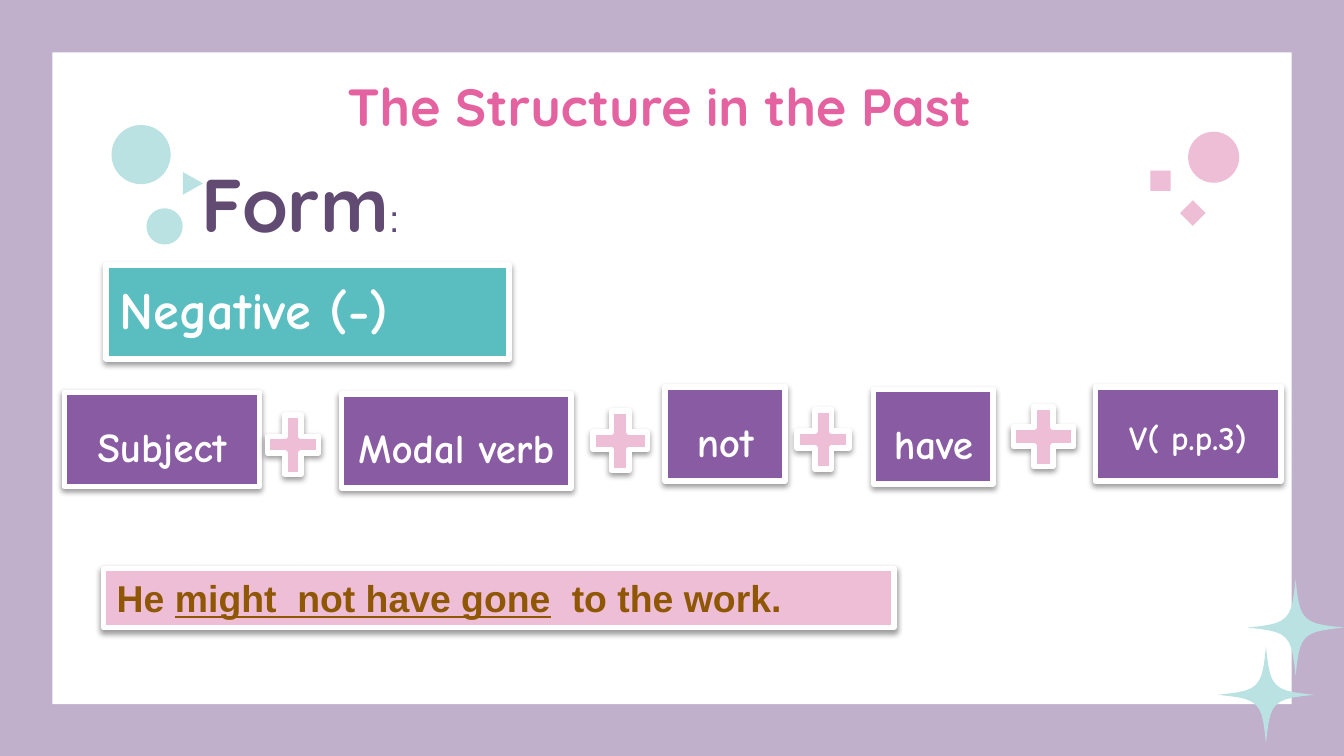
import pptx
import pptx.util
import pptx.dml.color
import pptx.enum.shapes
import pptx.enum.text
import pptx.oxml
import pptx.oxml.ns
from pptx.util import Inches

SHAPE = pptx.enum.shapes.MSO_SHAPE
ALIGN = pptx.enum.text.PP_ALIGN
ANCHOR = pptx.enum.text.MSO_ANCHOR

THEME = {
    "frame": "C0B0CC", "panel": "FFFFFF", "title": "E562A0", "heading": "624B73",
    "purple": "885BA2", "teal": "5ABEC0", "pink": "EEBDD6", "mint": "BBE2E2",
    "white": "FFFFFF", "example": "8F5603",
    "display": "Quicksand", "hand": "Comic Neue", "body": "Arial",
    "title_size": 28, "heading_size": 40, "label_size": 28,
    "term_size": 22, "small_size": 18, "example_size": 20,
}

# Runs: text, font, size, colour, bold, underline
TITLE = [("The Structure in the Past", "display", "title_size", "title", True, False)]
HEADING = [("Form", "display", "heading_size", "heading", True, False),
           (":", "body", "example_size", "heading", False, False)]
LABEL = [("Negative (-)", "hand", "label_size", "white", True, False)]
EXAMPLE = [("He ", "body", "example_size", "example", True, False),
           ("might  not have gone", "body", "example_size", "example", True, True),
           ("  to the work.", "body", "example_size", "example", True, False)]

# Formula terms: text, left, top, width, size, how far the text sits below the middle
TERMS = [("Subject", 0.48, 2.92, 1.45, "term_size", 0.05),
         ("Modal verb", 2.54, 2.93, 1.71, "term_size", 0.05),
         ("not", 4.95, 2.88, 0.89, "term_size", 0.05),
         ("have", 6.5, 2.9, 0.89, "term_size", 0.05),
         ("V( p.p.3)", 8.15, 2.88, 1.38, "small_size", 0.02)]
TERM_HEIGHT = 0.7
# Plus signs: left, top, width
PLUSES = [(1.92, 3.01, 0.52), (4.34, 2.98, 0.55), (5.86, 2.97, 0.53), (7.46, 2.95, 0.61)]
PLUS_HEIGHT = 0.6

# Ornament groups: colour, then shape, box, rotation
ORNAMENTS = [
    ("pink", [(SHAPE.DIAMOND, (8.78, 1.49, 0.19, 0.19), 0),
              (SHAPE.RECTANGLE, (8.56, 1.27, 0.15, 0.15), 0),
              (SHAPE.OVAL, (8.84, 0.98, 0.38, 0.38), 0)]),
    ("mint", [(SHAPE.OVAL, (0.83, 0.93, 0.44, 0.44), 333.4),
              (SHAPE.OVAL, (1.09, 1.55, 0.27, 0.27), 333.4),
              (SHAPE.ISOSCELES_TRIANGLE, (1.35, 1.29, 0.17, 0.15), 90)]),
]
STAR_CENTRES = [(9.64, 4.67), (9.42, 5.17)]
# Bezier points of one quarter of a star, from its centre
STAR_ARC = [(0, -0.36), (-0.03, -0.05), (-0.05, -0.03), (-0.36, 0)]

SHADOW = ('<a:effectLst %s><a:outerShdw blurRad="39370" dist="20320" dir="5400000" rotWithShape="0">'
          '<a:srgbClr val="000000"><a:alpha val="38000"/></a:srgbClr></a:outerShdw></a:effectLst>'
          % pptx.oxml.ns.nsdecls("a"))


def rgb(name):
    return pptx.dml.color.RGBColor.from_string(THEME[name])


def paint(sp, colour):
    """Flat fill with neither outline nor shadow."""
    sp.shadow.inherit = False
    sp.fill.solid()
    sp.fill.fore_color.rgb = rgb(colour)
    sp.line.fill.background()


def add_flat(shapes, kind, box, colour, rotation=0):
    sp = shapes.add_shape(kind, *map(Inches, box))
    paint(sp, colour)
    sp.rotation = rotation
    return sp


def add_card(shapes, kind, box, colour):
    """Shape with a white outline and a soft shadow below."""
    sp = add_flat(shapes, kind, box, colour)
    sp.line.color.rgb = rgb("white")
    sp.line.width = pptx.util.Pt(3)
    props = sp._element.spPr
    props.remove(props.find(pptx.oxml.ns.qn("a:effectLst")))
    props.append(pptx.oxml.parse_xml(SHADOW))
    return sp


def write(sp, runs, align=ALIGN.LEFT, drop=0, wrap=True):
    """Text centred vertically, moved down by drop inches."""
    tf = sp.text_frame
    tf.word_wrap = wrap
    tf.auto_size = pptx.enum.text.MSO_AUTO_SIZE.NONE
    tf.vertical_anchor = ANCHOR.MIDDLE
    tf.margin_left = tf.margin_right = Inches(0.1)
    tf.margin_top, tf.margin_bottom = Inches(0.05 + drop), Inches(0.05 - drop)
    p = tf.paragraphs[0]
    p.alignment = align
    for text, font, size, colour, bold, underline in runs:
        r = p.add_run()
        r.text = text
        r.font.name = THEME[font]
        r.font.size = pptx.util.Pt(THEME[size])
        r.font.color.rgb = rgb(colour)
        r.font.bold = bold
        r.font.underline = underline


def add_star(shapes, cx, cy, steps=10):
    points = []
    arc = STAR_ARC
    for _ in range(4):
        for i in range(steps):
            t = i / steps
            weights = ((1 - t) ** 3, 3 * t * (1 - t) ** 2, 3 * t * t * (1 - t), t ** 3)
            x, y = (sum(w * pt[axis] for w, pt in zip(weights, arc)) for axis in (0, 1))
            points.append((Inches(cx + x), Inches(cy + y)))
        arc = [(y, -x) for x, y in arc]
    builder = shapes.build_freeform(*points[0])
    builder.add_line_segments(points[1:], close=True)
    paint(builder.convert_to_shape(), "mint")


def main():
    prs = pptx.Presentation()
    prs.slide_width = Inches(10)
    prs.slide_height = prs.slide_width * 9 // 16
    s = prs.slides.add_slide(prs.slide_layouts[5])
    shapes = s.shapes
    s.background.fill.solid()
    s.background.fill.fore_color.rgb = rgb("frame")

    title = shapes.title
    title.left, title.top, title.width, title.height = map(Inches, (0.75, 0.45, 8.31, 0.63))
    write(title, TITLE, ALIGN.CENTER, drop=0.02)
    panel = add_flat(shapes, SHAPE.RECTANGLE, (0.39, 0.39, 9.22, 4.85), "panel")
    title._element.addprevious(panel._element)

    for colour, parts in ORNAMENTS:
        group = shapes.add_group_shape()
        for kind, box, rotation in parts:
            add_flat(group.shapes, kind, box, colour, rotation)
    for centre in STAR_CENTRES:
        add_star(shapes, *centre)

    write(shapes.add_textbox(*map(Inches, (1.4, 1.12, 5, 0.77))), HEADING)
    label = add_card(shapes, SHAPE.RECTANGLE, (0.79, 1.97, 3, 0.7), "teal")
    write(label, LABEL, drop=-0.02)
    for text, left, top, width, size, drop in TERMS:
        sp = add_card(shapes, SHAPE.RECTANGLE, (left, top, width, TERM_HEIGHT), "purple")
        write(sp, [(text, "hand", size, "white", True, False)], ALIGN.CENTER, drop, wrap=False)
    for left, top, width in PLUSES:
        add_card(shapes, SHAPE.MATH_PLUS, (left, top, width, PLUS_HEIGHT), "pink")
    example = add_card(shapes, SHAPE.RECTANGLE, (0.77, 4.23, 5.88, 0.44), "pink")
    write(example, EXAMPLE)

    prs.save("out.pptx")


if __name__ == "__main__":
    main()
